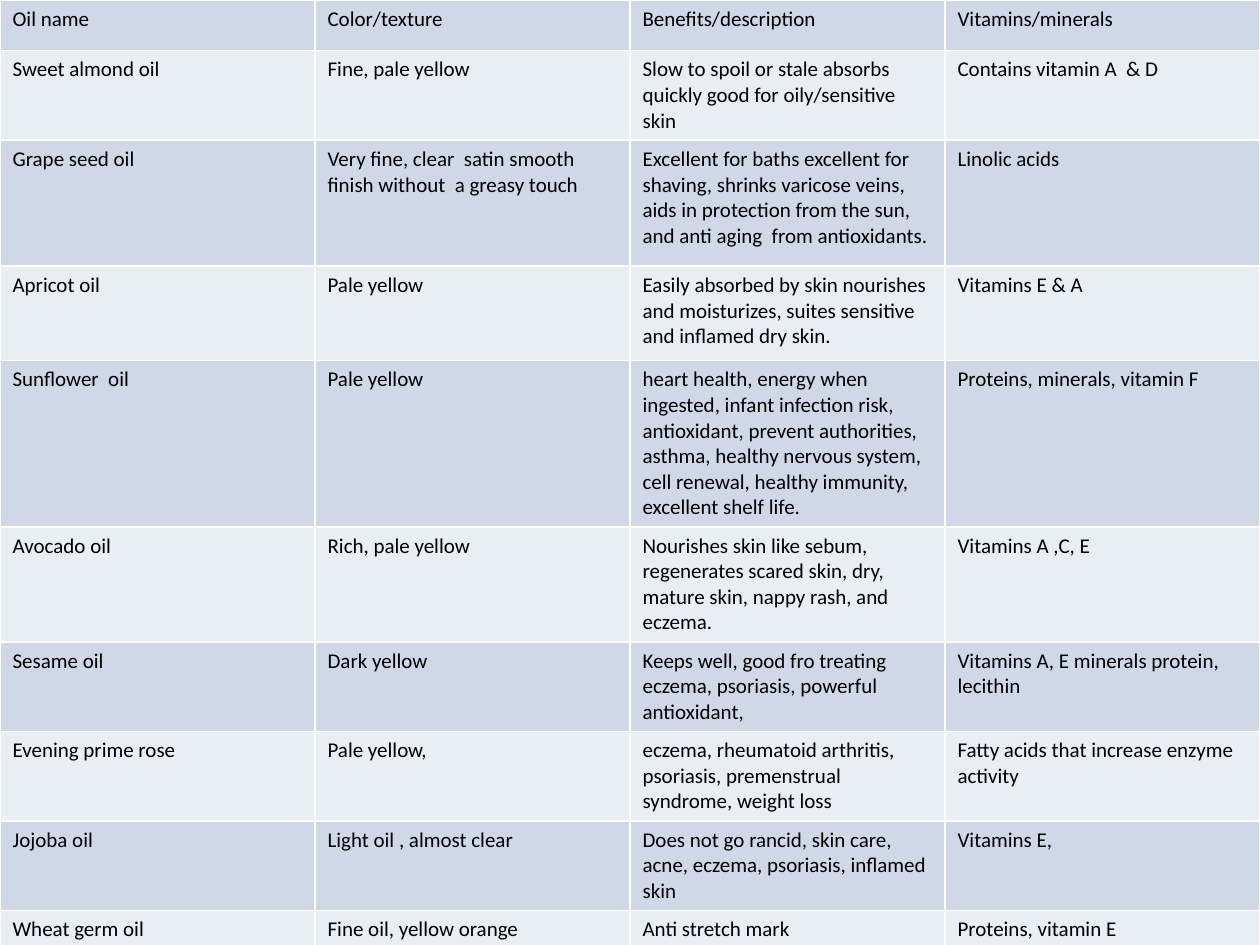
import pptx
import pptx.dml.color
import pptx.oxml
import pptx.oxml.ns
import pptx.util

Pt = pptx.util.Pt

ROWS = [
    (29, "Oil name", "Color/texture", "Benefits/description", "Vitamins/minerals"),
    (51, "Sweet almond oil", "Fine, pale yellow",
     "Slow to spoil or stale absorbs quickly good for oily/sensitive skin",
     "Contains vitamin A  & D"),
    (72, "Grape seed oil",
     "Very fine, clear  satin smooth finish without  a greasy touch",
     "Excellent for baths excellent for shaving, shrinks varicose veins, "
     "aids in protection from the sun,  and anti aging  from antioxidants.",
     "Linolic acids"),
    (54, "Apricot oil", "Pale yellow",
     "Easily absorbed by skin nourishes and moisturizes, suites sensitive "
     "and inflamed dry skin.",
     "Vitamins E & A"),
    (95, "Sunflower  oil", "Pale yellow",
     "heart health, energy when ingested, infant infection risk, antioxidant, "
     "prevent authorities, asthma, healthy nervous system, cell renewal, "
     "healthy immunity, excellent shelf life.",
     "Proteins, minerals, vitamin F"),
    (65, "Avocado oil", "Rich, pale yellow",
     "Nourishes skin like sebum, regenerates scared skin, dry,  mature skin, "
     "nappy rash, and eczema.",
     "Vitamins A ,C, E"),
    (51, "Sesame oil", "Dark yellow",
     "Keeps well, good fro treating eczema, psoriasis, powerful antioxidant,",
     "Vitamins A, E minerals protein, lecithin"),
    (51, "Evening prime rose", "Pale yellow,",
     "eczema, rheumatoid arthritis, psoriasis, premenstrual syndrome, weight loss",
     "Fatty acids that increase enzyme activity"),
    (51, "Jojoba oil", "Light oil , almost clear",
     "Does not go rancid, skin care, acne, eczema, psoriasis, inflamed skin",
     "Vitamins E,"),
    (31, "Wheat germ oil", "Fine oil, yellow orange", "Anti stretch mark",
     "Proteins, vitamin E"),
]
BANDS = ["D0D8E8", "E9EDF4"]
COL_WIDTH = 180


def rgb(hex_string):
    return pptx.dml.color.RGBColor.from_string(hex_string)


def write_cell(cell, text, *, fill, size=12, font="Calibri", color="000000",
               border="FFFFFF", border_width=1):
    """Fill a table cell with formatted text, a background and four borders."""
    r = cell.text_frame.paragraphs[0].add_run()
    r.text = text
    r.font.size = Pt(size)
    r.font.name = font
    r.font.color.rgb = rgb(color)
    # Borders come before the fill in a:tcPr.
    tc_pr = cell._tc.get_or_add_tcPr()
    for side in ("lnL", "lnR", "lnT", "lnB"):
        tc_pr.append(pptx.oxml.parse_xml(
            f'<a:{side} {pptx.oxml.ns.nsdecls("a")} w="{Pt(border_width)}">'
            f'<a:solidFill><a:srgbClr val="{border}"/></a:solidFill></a:{side}>'))
    cell.fill.solid()
    cell.fill.fore_color.rgb = rgb(fill)


prs = pptx.Presentation()
prs.slide_width, prs.slide_height = Pt(720), Pt(540)
s = prs.slides.add_slide(prs.slide_layouts[6])

n_cols = len(ROWS[0]) - 1
total_height = sum(row[0] for row in ROWS)
frame = s.shapes.add_table(len(ROWS), n_cols, 0, 0,
                           Pt(n_cols * COL_WIDTH), Pt(total_height))
table = frame.table
table.first_row = False

for column in table.columns:
    column.width = Pt(COL_WIDTH)

for i, (height, *texts) in enumerate(ROWS):
    table.rows[i].height = Pt(height)
    for j, text in enumerate(texts):
        write_cell(table.cell(i, j), text, fill=BANDS[i % 2])

prs.save("out.pptx")
